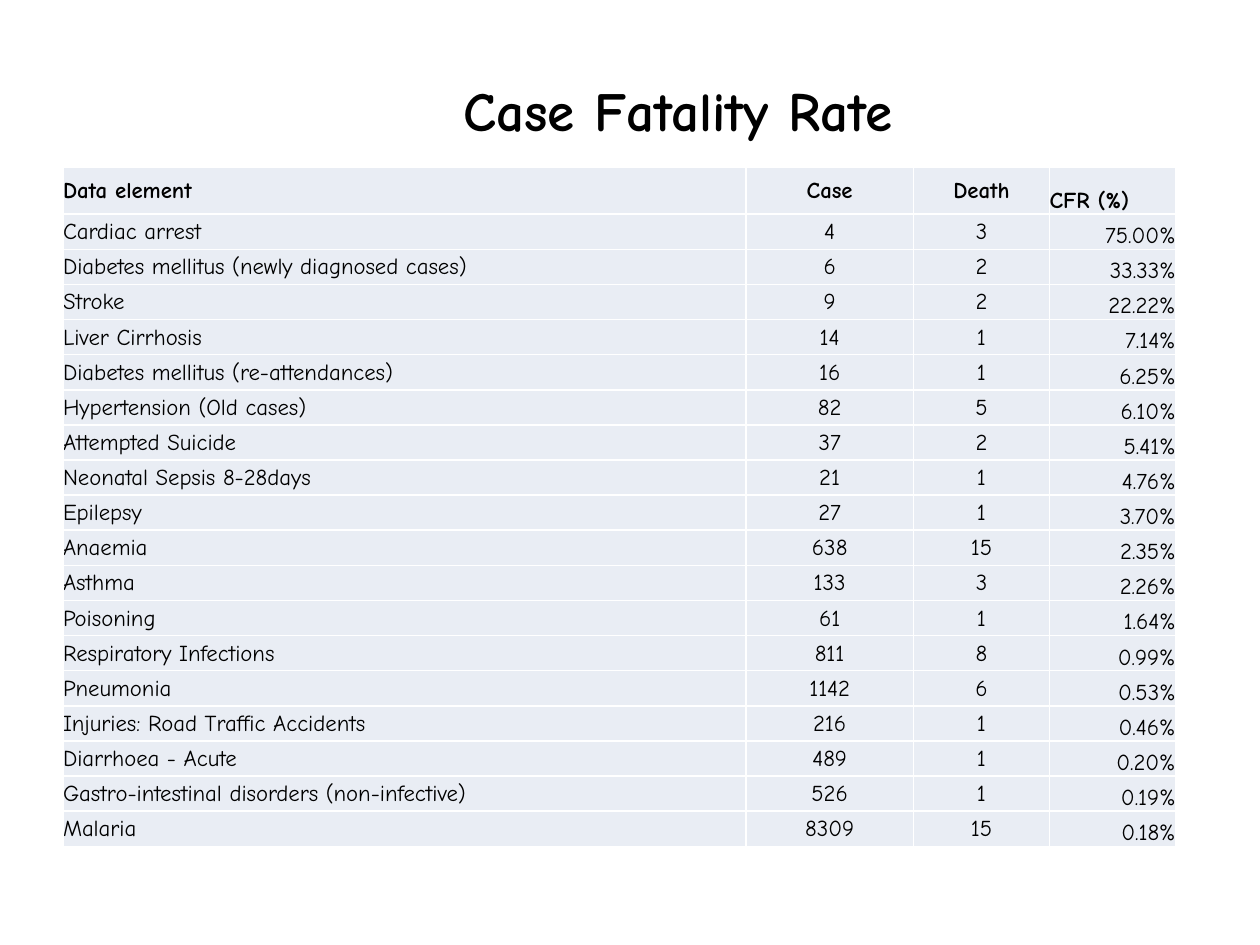
from dataclasses import dataclass
from typing import NamedTuple

import pptx
import pptx.dml.color
import pptx.enum.text
import pptx.oxml
import pptx.oxml.ns
import pptx.util

Inches = pptx.util.Inches
ALIGN = pptx.enum.text.PP_ALIGN
ANCHOR = pptx.enum.text.MSO_ANCHOR


@dataclass(frozen=True)
class Theme:
    font: str = "Comic Neue"
    text: str = "000000"
    cell: str = "E9EDF4"
    border: str = "FFFFFF"
    border_pt: float = 1
    title_pt: float = 31.5
    table_pt: float = 13


class Column(NamedTuple):
    heading: str
    width: float
    align: ALIGN
    heading_align: ALIGN
    anchor: ANCHOR


class Disease(NamedTuple):
    name: str
    cases: int
    deaths: int

    def texts(self) -> list[str]:
        rate = self.deaths / self.cases
        return [self.name, str(self.cases), str(self.deaths), f"{rate:.2%}"]


THEME = Theme()

COLUMNS = [
    Column("Data element", 5.42, ALIGN.LEFT, ALIGN.LEFT, ANCHOR.MIDDLE),
    Column("Case", 1.33, ALIGN.CENTER, ALIGN.CENTER, ANCHOR.MIDDLE),
    Column("Death", 1.08, ALIGN.CENTER, ALIGN.CENTER, ANCHOR.MIDDLE),
    Column("CFR (%)", 1, ALIGN.RIGHT, ALIGN.LEFT, ANCHOR.BOTTOM),
]

DISEASES = [
    Disease("Cardiac arrest", 4, 3),
    Disease("Diabetes mellitus (newly diagnosed cases)", 6, 2),
    Disease("Stroke", 9, 2),
    Disease("Liver Cirrhosis", 14, 1),
    Disease("Diabetes mellitus (re-attendances)", 16, 1),
    Disease("Hypertension (Old cases)", 82, 5),
    Disease("Attempted Suicide", 37, 2),
    Disease("Neonatal Sepsis 8-28days", 21, 1),
    Disease("Epilepsy", 27, 1),
    Disease("Anaemia", 638, 15),
    Disease("Asthma", 133, 3),
    Disease("Poisoning", 61, 1),
    Disease("Respiratory Infections", 811, 8),
    Disease("Pneumonia", 1142, 6),
    Disease("Injuries: Road Traffic Accidents", 216, 1),
    Disease("Diarrhoea - Acute", 489, 1),
    Disease("Gastro-intestinal disorders (non-infective)", 526, 1),
    Disease("Malaria", 8309, 15),
]


def write(tf, text: str, size: float, bold: bool, align: ALIGN) -> None:
    p = tf.paragraphs[0]
    p.alignment = align
    r = p.add_run()
    r.text = text
    r.font.name = THEME.font
    r.font.size = pptx.util.Pt(size)
    r.font.bold = bold
    r.font.color.rgb = pptx.dml.color.RGBColor.from_string(THEME.text)


def add_borders(cell) -> None:
    tc_pr = cell._tc.get_or_add_tcPr()
    width = pptx.util.Pt(THEME.border_pt)
    for i, side in enumerate(("lnL", "lnR", "lnT", "lnB")):
        line = pptx.oxml.parse_xml(
            f'<a:{side} {pptx.oxml.ns.nsdecls("a")} w="{width}"><a:solidFill>'
            f'<a:srgbClr val="{THEME.border}"/></a:solidFill></a:{side}>')
        tc_pr.insert(i, line)  # borders come before the fill


def draw_cell(cell, text: str, column: Column, heading: bool) -> None:
    cell.margin_left = cell.margin_right = cell.margin_bottom = 0
    cell.margin_top = Inches(0.01)
    cell.vertical_anchor = column.anchor
    cell.fill.solid()
    cell.fill.fore_color.rgb = pptx.dml.color.RGBColor.from_string(THEME.cell)
    add_borders(cell)
    align = column.heading_align if heading else column.align
    write(cell.text_frame, text, THEME.table_pt, heading, align)


def draw_title(s, text: str) -> None:
    sp = s.shapes.add_textbox(Inches(1.17), Inches(0.58), Inches(8.42), Inches(0.58))
    tf = sp.text_frame
    tf.word_wrap = True
    tf.vertical_anchor = ANCHOR.MIDDLE
    tf.margin_top = tf.margin_bottom = 0
    write(tf, text, THEME.title_pt, True, ALIGN.CENTER)


def draw_table(s, columns: list[Column], diseases: list[Disease]) -> None:
    height, heading_height = Inches(5.39), Inches(0.37)
    width = Inches(sum(c.width for c in columns))
    table = s.shapes.add_table(len(diseases) + 1, len(columns),
                               Inches(0.5), Inches(1.33), width, height).table
    table.horz_banding = False

    # Column widths and row heights
    for col, column in zip(table.columns, columns):
        col.width = Inches(column.width)
    for row in table.rows:
        row.height = (height - heading_height) // len(diseases)
    table.rows[0].height = heading_height

    # Headings, then one row for each disease
    rows = [[c.heading for c in columns]] + [d.texts() for d in diseases]
    for i, texts in enumerate(rows):
        for j, (text, column) in enumerate(zip(texts, columns)):
            draw_cell(table.cell(i, j), text, column, heading=i == 0)


def main() -> None:
    prs = pptx.Presentation()
    prs.slide_width, prs.slide_height = Inches(10), Inches(7.5)
    s = prs.slides.add_slide(prs.slide_layouts[6])
    draw_title(s, "Case Fatality Rate")
    draw_table(s, COLUMNS, DISEASES)
    prs.save("out.pptx")


if __name__ == "__main__":
    main()
